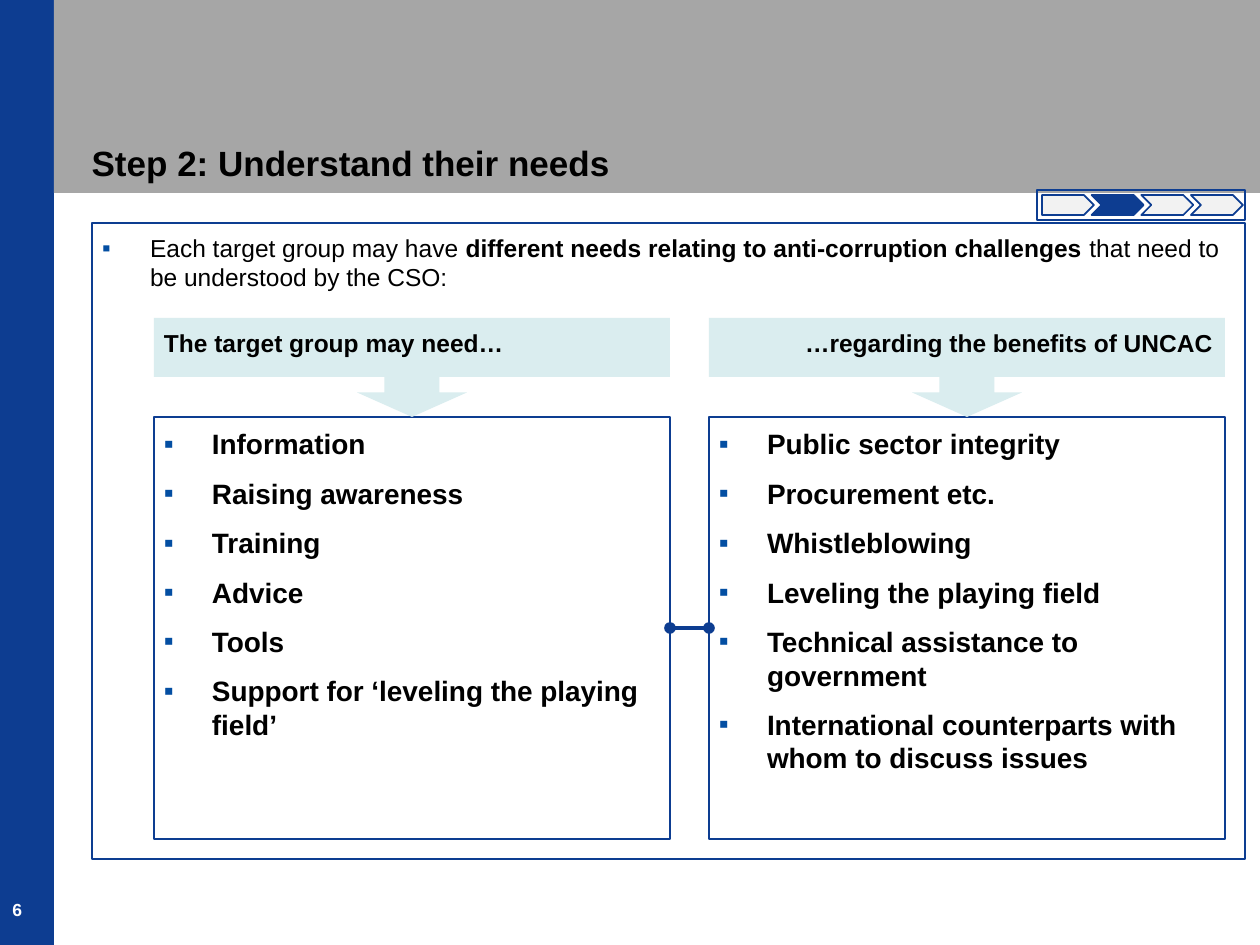
"""Build the "Step 2: Understand their needs" slide."""
import pptx
import pptx.dml.color
import pptx.enum.shapes
import pptx.enum.text
import pptx.oxml
import pptx.oxml.ns
import pptx.util

SHAPE = pptx.enum.shapes.MSO_SHAPE
ANCHOR = pptx.enum.text.MSO_ANCHOR
ALIGN = pptx.enum.text.PP_ALIGN
NS = pptx.oxml.ns.nsdecls("a")
EMU_PER_PX = 914400 / 126
FONT = "Arial"
COLORS = {"blue": "0D3D91", "gray": "A6A6A6", "pale": "DAEDEF", "light": "F2F2F2",
          "bullet": "034EA2", "black": "000000", "white": "FFFFFF"}

TITLE = "Step 2: Understand their needs"
NUMBER = "6"
INTRO = [("Each target group may have ", False),
         ("different needs relating to anti-corruption challenges ", True),
         ("that need to be understood by the CSO:", False)]
COLUMNS = [
    ("The target group may need…", ALIGN.LEFT, 10,
     ["Information", "Raising awareness", "Training", "Advice", "Tools",
      "Support for ‘leveling the playing field’"]),
    ("…regarding the benefits of UNCAC ", ALIGN.RIGHT, 5,
     ["Public sector integrity", "Procurement etc.", "Whistleblowing",
      "Leveling the playing field", "Technical assistance to government",
      "International counterparts with whom to discuss issues"]),
]
STEPS, CURRENT_STEP = 4, 1
COL_LEFT, COL_W, COL_GAP = 154, 516, 39
PANEL_TOP, PANEL_H = 417, 422
HEAD_TOP, HEAD_H = 318, 59
ARROW_W, ARROW_H = 110, 49
LINK_Y = 628


def px(n):
    return pptx.util.Emu(round(n * EMU_PER_PX))


def rgb(name):
    return pptx.dml.color.RGBColor.from_string(COLORS[name])


def add_box(slide, kind, box, fill=None, line=None):
    sp = slide.shapes.add_shape(kind, *map(px, box))
    sp.shadow.inherit = False
    if fill:
        sp.fill.solid()
        sp.fill.fore_color.rgb = rgb(fill)
    else:
        sp.fill.background()
    if line:
        sp.line.color.rgb = rgb(line)
        sp.line.width = pptx.util.Pt(1)
    else:
        sp.line.fill.background()
    return sp


def frame_text(sp, anchor, side=None, top=10):
    tf = sp.text_frame
    tf.word_wrap = True
    tf.auto_size = pptx.enum.text.MSO_AUTO_SIZE.NONE
    tf.vertical_anchor = anchor
    if side is not None:
        tf.margin_left = tf.margin_right = px(side)
        tf.margin_top = tf.margin_bottom = px(top)
    return tf


def write(p, runs, size, color="black", align=ALIGN.LEFT):
    p.alignment = align
    for text, bold in runs:
        r = p.add_run()
        r.text = text
        r.font.name = FONT
        r.font.size = pptx.util.Pt(size)
        r.font.bold = bold
        r.font.color.rgb = rgb(color)


def add_bullet(p):
    pPr = p._p.get_or_add_pPr()
    pPr.set("marL", str(px(48)))
    pPr.set("indent", str(-px(48)))
    for xml in (f'<a:buClr {NS}><a:srgbClr val="{COLORS["bullet"]}"/></a:buClr>',
                f'<a:buFont {NS} typeface="{FONT}"/>',
                f'<a:buChar {NS} char="▪"/>'):
        pPr.append(pptx.oxml.parse_xml(xml))


def write_bullets(sp, items, size):
    tf = frame_text(sp, ANCHOR.TOP, 10)
    for i, runs in enumerate(items):
        p = tf.add_paragraph() if i else tf.paragraphs[0]
        if i:
            p.space_before = pptx.util.Pt(9)
        add_bullet(p)
        write(p, runs, size)


def add_link(slide, x1, x2, y):
    cx = slide.shapes.add_connector(pptx.enum.shapes.MSO_CONNECTOR.STRAIGHT,
                                    px(x1), px(y), px(x2), px(y))
    cx.line.color.rgb = rgb("blue")
    cx.line.width = pptx.util.Pt(2.25)
    for end in ("headEnd", "tailEnd"):
        cx.line._ln.append(pptx.oxml.parse_xml(f'<a:{end} {NS} type="oval"/>'))
    cx._element.spPr.append(pptx.oxml.parse_xml(f"<a:effectLst {NS}/>"))


def add_banner(slide):
    add_box(slide, SHAPE.RECTANGLE, (-11, 0, 65, 945), "blue")
    add_box(slide, SHAPE.RECTANGLE, (54, 0, 1211, 193), "gray")
    title = slide.shapes.title
    slide.shapes._spTree.append(title._element)
    title.left, title.top, title.width, title.height = map(px, (79, 45, 838, 145))
    tf = frame_text(title, ANCHOR.BOTTOM)
    write(tf.paragraphs[0], [(TITLE, True)], 20)
    number = slide.shapes.add_textbox(*map(px, (0, 861, 67, 65)))
    tf = frame_text(number, ANCHOR.BOTTOM)
    write(tf.paragraphs[0], [(NUMBER, True)], 10, "white")


def add_column(slide, left, heading, align, side, items):
    panel = add_box(slide, SHAPE.RECTANGLE, (left, PANEL_TOP, COL_W, PANEL_H), line="blue")
    write_bullets(panel, [[(item, True)] for item in items], 16)
    head = add_box(slide, SHAPE.RECTANGLE, (left, HEAD_TOP, COL_W, HEAD_H), "pale")
    tf = frame_text(head, ANCHOR.TOP, side)
    write(tf.paragraphs[0], [(heading, True)], 14, align=align)
    add_box(slide, SHAPE.DOWN_ARROW, (left + (COL_W - ARROW_W) / 2, PANEL_TOP - ARROW_H,
                                      ARROW_W, ARROW_H), "pale")


def add_tracker(slide):
    for i in range(STEPS):
        kind = SHAPE.CHEVRON if i else SHAPE.PENTAGON
        fill = "blue" if i == CURRENT_STEP else "light"
        add_box(slide, kind, (1042 + 149 * i / 3, 195, 52, 20), fill, "blue")
    add_box(slide, SHAPE.RECTANGLE, (1037, 190, 208, 30), line="blue")


def main():
    prs = pptx.Presentation()
    prs.slide_width, prs.slide_height = px(1260), px(945)
    slide = prs.slides.add_slide(prs.slide_layouts[5])
    add_banner(slide)
    frame = add_box(slide, SHAPE.RECTANGLE, (92, 223, 1153, 636), line="blue")
    write_bullets(frame, [INTRO], 14)
    for i, column in enumerate(COLUMNS):
        add_column(slide, COL_LEFT + i * (COL_W + COL_GAP), *column)
    add_link(slide, COL_LEFT + COL_W, COL_LEFT + COL_W + COL_GAP, LINK_Y)
    add_tracker(slide)
    prs.save("out.pptx")


if __name__ == "__main__":
    main()
